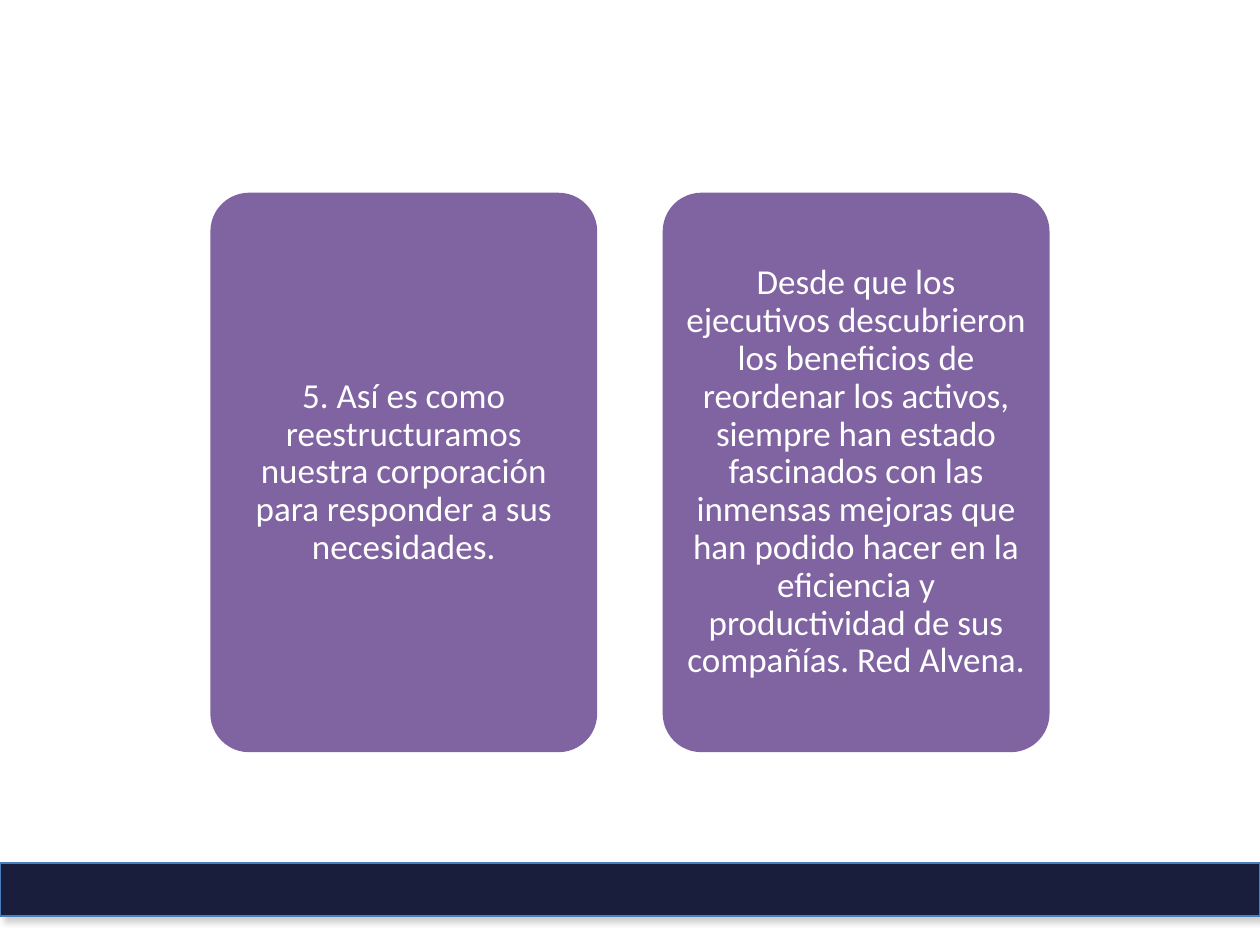
from lxml.etree import SubElement
from pptx import Presentation
from pptx.dml.color import RGBColor
from pptx.enum.shapes import MSO_SHAPE
from pptx.enum.text import MSO_ANCHOR, PP_ALIGN
from pptx.oxml.ns import qn
from pptx.util import Inches, Pt

CARD_TEXTS = [
    "5. Así es como reestructuramos nuestra corporación para responder a sus necesidades.",
    "Desde que los ejecutivos descubrieron los beneficios de reordenar los activos, "
    "siempre han estado fascinados con las inmensas mejoras que han podido hacer en la "
    "eficiencia y productividad de sus compañías. Red Alvena.",
]
COLORS = {
    "band": "191E3C",
    "band_line": "4A7EBB",
    "shadow": "808080",
    "card": "8064A2",
    "text": "FFFFFF",
}
SLIDE_W, SLIDE_H = 10, 7.5
BAND_TOP, BAND_H = 6.85, 0.42
CARD_TOP, CARD_W, CARD_H, CARD_GAP = 1.53, 3.07, 4.44, 0.52
CARD_INSET = Inches(0.08)

FRAME_FORMAT = {
    "word_wrap": True,
    "vertical_anchor": MSO_ANCHOR.MIDDLE,
    "margin_left": CARD_INSET,
    "margin_right": CARD_INSET,
    "margin_top": CARD_INSET,
    "margin_bottom": CARD_INSET,
}
PARAGRAPH_FORMAT = {
    "alignment": PP_ALIGN.CENTER,
    "line_spacing": 0.9,
    "space_after": Pt(7),
}
FONT_FORMAT = {"name": "Calibri", "size": Pt(20)}


def color(key):
    return RGBColor.from_string(COLORS[key])


def apply_format(target, values):
    for name, value in values.items():
        setattr(target, name, value)


def add_filled(slide, preset, left, top, width, height, fill):
    """Add a flat preset shape without outline or shadow."""
    shape = slide.shapes.add_shape(
        preset, Inches(left), Inches(top), Inches(width), Inches(height))
    shape.fill.solid()
    shape.fill.fore_color.rgb = color(fill)
    shape.line.fill.background()
    shape.shadow.inherit = False
    return shape


def add_band(slide):
    band = add_filled(slide, MSO_SHAPE.RECTANGLE, 0, BAND_TOP, SLIDE_W, BAND_H, "band")
    band.line.color.rgb = color("band_line")
    band.line.width = Pt(0.75)
    effects = band._element.spPr.find(qn("a:effectLst"))
    shadow = SubElement(effects, qn("a:outerShdw"), {
        "blurRad": str(Pt(4)), "dist": str(Pt(3)),
        "dir": str(45 * 60000), "rotWithShape": "0"})
    tint = SubElement(shadow, qn("a:srgbClr"), {"val": COLORS["shadow"]})
    SubElement(tint, qn("a:alpha"), {"val": "40000"})


def add_card(slide, left, text):
    card = add_filled(
        slide, MSO_SHAPE.ROUNDED_RECTANGLE, left, CARD_TOP, CARD_W, CARD_H, "card")
    card.adjustments[0] = 0.1
    frame = card.text_frame
    apply_format(frame, FRAME_FORMAT)
    paragraph = frame.paragraphs[0]
    apply_format(paragraph, PARAGRAPH_FORMAT)
    run = paragraph.add_run()
    run.text = text
    apply_format(run.font, FONT_FORMAT)
    run.font.color.rgb = color("text")


def main():
    deck = Presentation()
    deck.slide_width, deck.slide_height = Inches(SLIDE_W), Inches(SLIDE_H)
    slide = deck.slides.add_slide(deck.slide_layouts[6])
    add_band(slide)
    step = CARD_W + CARD_GAP
    first_left = (SLIDE_W - len(CARD_TEXTS) * step + CARD_GAP) / 2
    for index, text in enumerate(CARD_TEXTS):
        add_card(slide, first_left + index * step, text)
    deck.save("out.pptx")


if __name__ == "__main__":
    main()
